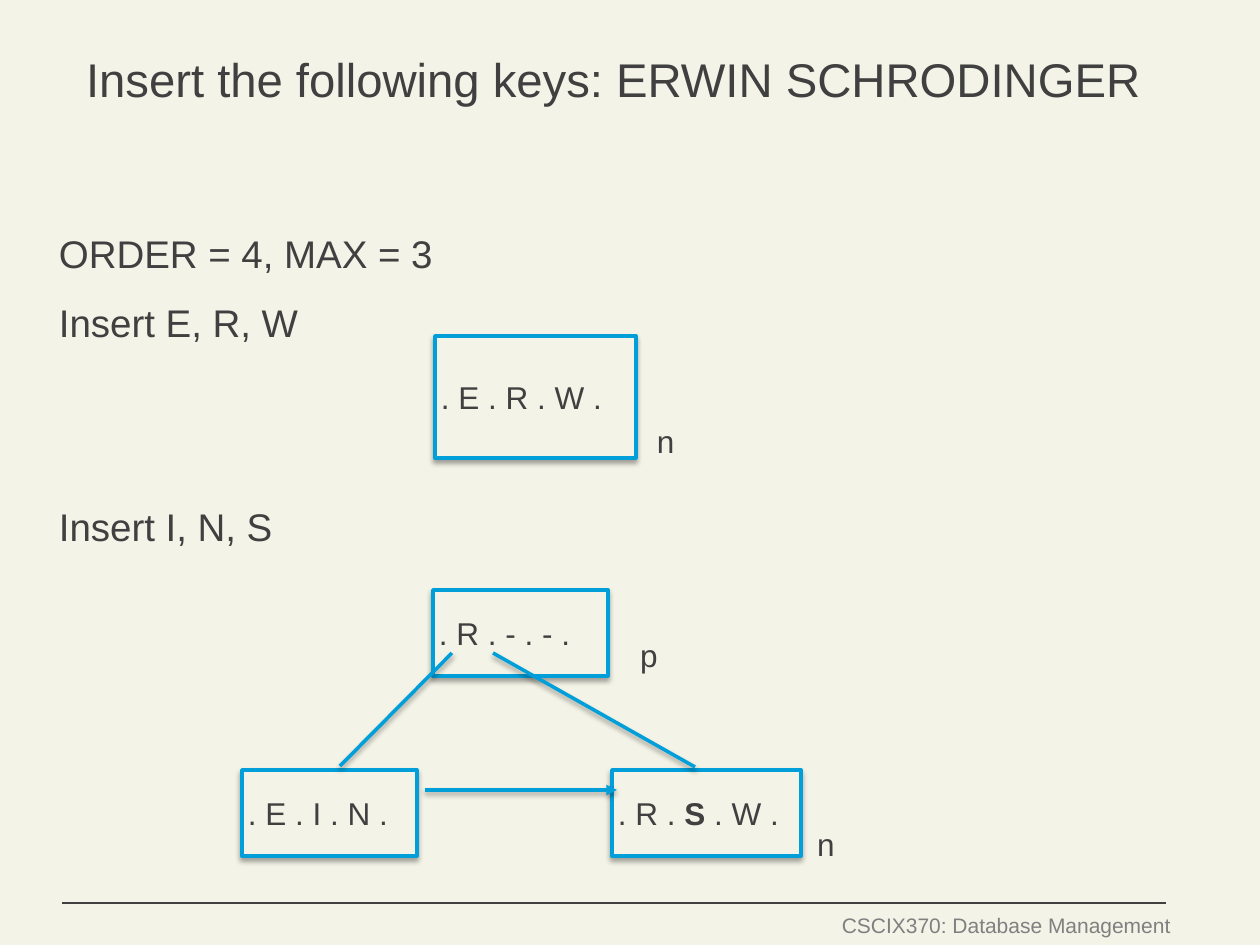
from dataclasses import dataclass

import pptx
import pptx.dml.color
import pptx.enum.shapes
import pptx.enum.text
import pptx.oxml
import pptx.oxml.ns
import pptx.util

EMU_PER_PX = 914400 / 126
INSET = 6
ALIGN = pptx.enum.text.PP_ALIGN
ANCHOR = pptx.enum.text.MSO_ANCHOR


@dataclass(frozen=True)
class Theme:
    font: str = "Arial"
    background: str = "F3F3E7"
    text: str = "404040"
    footer: str = "808080"
    accent: str = "009FDA"
    title_size: int = 27
    body_size: int = 22
    node_size: int = 18
    footer_size: int = 12
    accent_width: float = 2
    rule_width: float = 0.75
    line_spacing: float = 1.1


THEME = Theme()


@dataclass(frozen=True)
class Box:
    left: int
    top: int
    width: int
    height: int


@dataclass(frozen=True)
class Line:
    """One body line, with the gap above it in points."""
    text: str
    space_before: float = 0


@dataclass(frozen=True)
class Node:
    """A tree node; the text between asterisks is the bold key."""
    text: str
    box: Box


@dataclass(frozen=True)
class Label:
    text: str
    left: int
    top: int


@dataclass(frozen=True)
class Link:
    start: tuple[int, int]
    end: tuple[int, int]
    arrow: bool = False


TITLE = Line("Insert the following keys: ERWIN SCHRODINGER")
BODY = [
    Line("ORDER = 4, MAX = 3"),
    Line("Insert E, R, W", 10.6),
    Line("Insert I, N, S", 87.5),
]
NODES = [
    Node(". E . R . W .", Box(435, 336, 201, 122)),
    Node(". E . I . N .", Box(242, 770, 175, 86)),
    Node(". R . *S* . W .", Box(612, 770, 189, 86)),
    Node(". R . - . - .", Box(433, 590, 175, 86)),
]
LINKS = [
    Link((340, 766), (452, 653)),
    Link((695, 767), (493, 653)),
    Link((425, 790), (617, 790), arrow=True),
]
LABELS = [Label("n", 651, 416), Label("n", 811, 819), Label("p", 634, 630)]


def px(length: int) -> int:
    return round(length * EMU_PER_PX)


def rgb(value: str) -> pptx.dml.color.RGBColor:
    return pptx.dml.color.RGBColor.from_string(value)


def place(box: Box) -> tuple[int, int, int, int]:
    return px(box.left), px(box.top), px(box.width), px(box.height)


def set_insets(frame) -> None:
    frame.margin_left = frame.margin_right = px(INSET)
    frame.margin_top = frame.margin_bottom = px(INSET)


def style_paragraph(paragraph, size: int, color: str, alignment=ALIGN.LEFT) -> None:
    paragraph.alignment = alignment
    paragraph.font.name = THEME.font
    paragraph.font.size = pptx.util.Pt(size)
    paragraph.font.color.rgb = rgb(color)


def add_shadow(shape) -> None:
    """Give the shape a soft black shadow straight below it."""
    properties = shape._element.spPr
    for old in properties.findall(pptx.oxml.ns.qn("a:effectLst")):
        properties.remove(old)
    properties.append(pptx.oxml.parse_xml(
        f'<a:effectLst {pptx.oxml.ns.nsdecls("a")}>'
        '<a:outerShdw blurRad="38100" dist="22860" dir="5400000" rotWithShape="0">'
        '<a:srgbClr val="000000"><a:alpha val="35000"/></a:srgbClr>'
        '</a:outerShdw></a:effectLst>'))


def style_line(line, color: str, width: float) -> None:
    line.color.rgb = rgb(color)
    line.width = pptx.util.Pt(width)


def add_text(slide, box: Box, lines: list[Line], size: int, color: str = THEME.text,
             alignment=ALIGN.LEFT, wrap: bool = False, spacing: float = 1.0) -> None:
    frame = slide.shapes.add_textbox(*place(box)).text_frame
    set_insets(frame)
    frame.word_wrap = wrap
    for index, line in enumerate(lines):
        paragraph = frame.add_paragraph() if index else frame.paragraphs[0]
        paragraph.text = line.text
        paragraph.line_spacing = spacing
        paragraph.space_before = pptx.util.Pt(line.space_before)
        style_paragraph(paragraph, size, color, alignment)


def add_node(slide, node: Node) -> None:
    shape = slide.shapes.add_shape(
        pptx.enum.shapes.MSO_SHAPE.RECTANGLE, *place(node.box))
    shape.fill.solid()
    shape.fill.fore_color.rgb = rgb(THEME.background)
    style_line(shape.line, THEME.accent, THEME.accent_width)
    add_shadow(shape)
    frame = shape.text_frame
    set_insets(frame)
    frame.word_wrap = True
    frame.vertical_anchor = ANCHOR.MIDDLE
    paragraph = frame.paragraphs[0]
    for index, part in enumerate(node.text.split("*")):
        run = paragraph.add_run()
        run.text = part
        if index % 2:
            run.font.bold = True
    style_paragraph(paragraph, THEME.node_size, THEME.text)


def add_line(slide, link: Link, color: str, width: float):
    connector = slide.shapes.add_connector(
        pptx.enum.shapes.MSO_CONNECTOR.STRAIGHT,
        *map(px, link.start + link.end))
    style_line(connector.line, color, width)
    if link.arrow:
        connector.line._get_or_add_ln().append(pptx.oxml.parse_xml(
            f'<a:tailEnd {pptx.oxml.ns.nsdecls("a")} type="triangle"/>'))
    connector._element.spPr.append(pptx.oxml.parse_xml(
        f'<a:effectLst {pptx.oxml.ns.nsdecls("a")}/>'))
    return connector


def main() -> None:
    presentation = pptx.Presentation()
    presentation.slide_width, presentation.slide_height = px(1260), px(945)
    slide = presentation.slides.add_slide(presentation.slide_layouts[6])
    slide.background.fill.solid()
    slide.background.fill.fore_color.rgb = rgb(THEME.background)

    add_line(slide, Link((1166, 903), (62, 903)), THEME.text, THEME.rule_width)
    add_text(slide, Box(833, 907, 344, 37), [Line("CSCIX370: Database Management")],
             THEME.footer_size, THEME.footer, ALIGN.RIGHT)
    add_text(slide, Box(80, 39, 1175, 141), [TITLE], THEME.title_size,
             wrap=True, spacing=THEME.line_spacing)
    add_text(slide, Box(53, 219, 1082, 651), BODY, THEME.body_size,
             wrap=True, spacing=THEME.line_spacing)
    for node in NODES:
        add_node(slide, node)
    for link in LINKS:
        add_shadow(add_line(slide, link, THEME.accent, THEME.accent_width))
    for label in LABELS:
        add_text(slide, Box(label.left, label.top, 32, 48), [Line(label.text)],
                 THEME.node_size)
    presentation.save("out.pptx")


if __name__ == "__main__":
    main()
